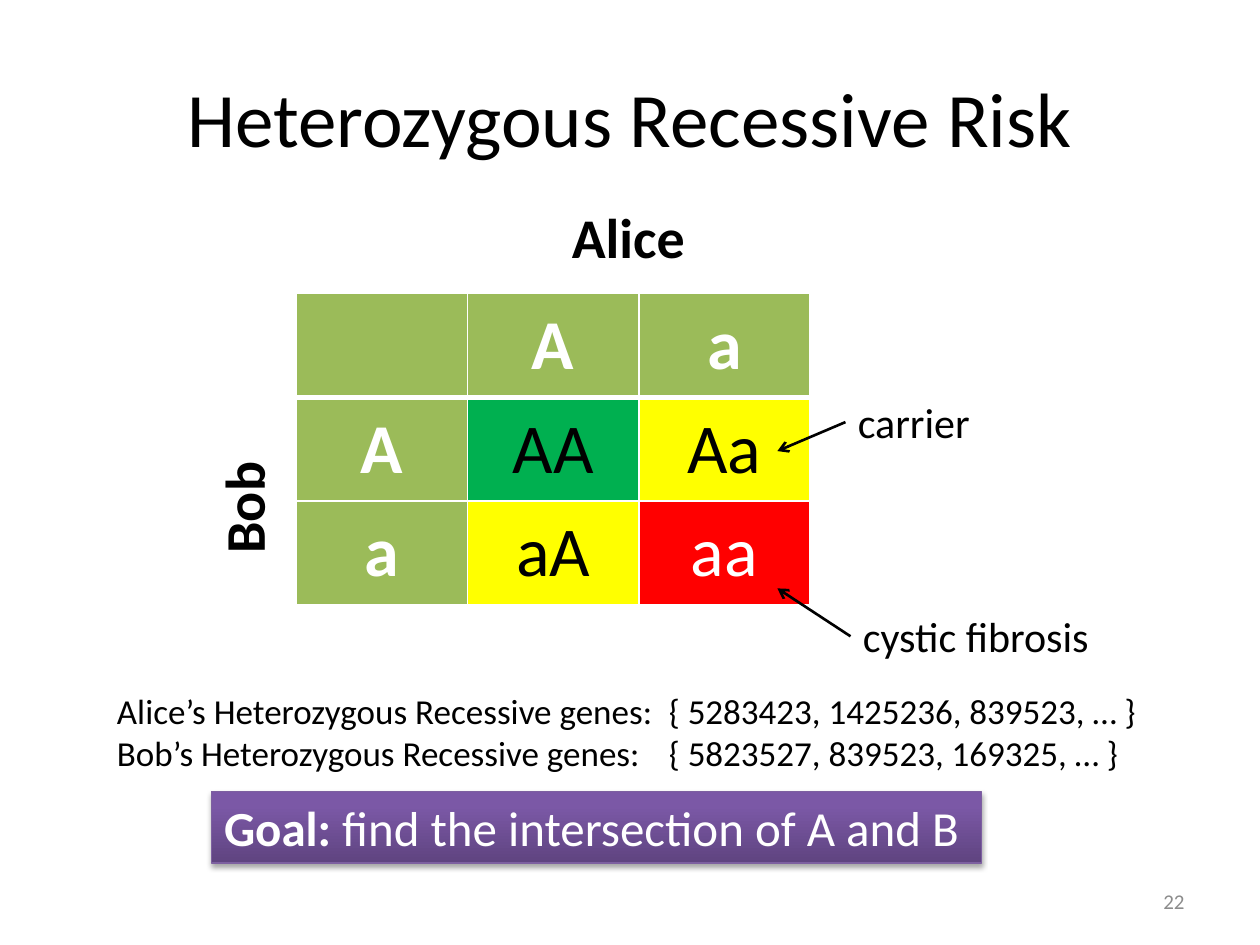
from lxml import etree
from pptx import Presentation
from pptx.dml.color import RGBColor
from pptx.enum.shapes import MSO_CONNECTOR, MSO_SHAPE
from pptx.enum.text import MSO_ANCHOR, MSO_AUTO_SIZE, PP_ALIGN
from pptx.oxml import parse_xml
from pptx.oxml.ns import qn
from pptx.util import Inches, Pt

LEFT, CENTER, RIGHT = PP_ALIGN.LEFT, PP_ALIGN.CENTER, PP_ALIGN.RIGHT
MIDDLE, TOP = MSO_ANCHOR.MIDDLE, MSO_ANCHOR.TOP
GROW = MSO_AUTO_SIZE.SHAPE_TO_FIT_TEXT
STRAIGHT, RECTANGLE = MSO_CONNECTOR.STRAIGHT, MSO_SHAPE.RECTANGLE
DRAWING_NS = 'xmlns:a="http://schemas.openxmlformats.org/drawingml/2006/main"'

COLORS = {
    "black": "000000", "white": "FFFFFF", "gray": "8C8C8C",
    "header": "9BBB59", "healthy": "00B050", "carrier": "FFFF00",
    "affected": "FF0000", "goal_line": "7D60A0",
    "goal_dark": "5F4480", "goal_mid": "7B58A6", "goal_light": "7C57A8",
}
SQUARE = [
    [("", "header"), ("A", "header"), ("a", "header")],
    [("A", "header"), ("AA", "healthy"), ("Aa", "carrier")],
    [("a", "header"), ("aA", "carrier"), ("aa", "affected")],
]
GENES = [
    ("Alice’s", "5283423, 1425236, 839523"),
    ("Bob’s", "5823527, 839523, 169325"),
]


def rgb(name):
    return RGBColor.from_string(COLORS[name])


def add_span(para, text, size, color="black", bold=False):
    span = para.add_run()
    span.text = text
    formats = {"name": "Calibri", "size": Pt(size), "bold": bold}
    for name, value in formats.items():
        setattr(span.font, name, value)
    span.font.color.rgb = rgb(color)


def add_label(page, box, text, size, color="black", bold=False,
              align=LEFT, anchor=TOP):
    label = page.shapes.add_textbox(*map(Inches, box))
    frame = label.text_frame
    formats = {"word_wrap": False, "auto_size": GROW, "vertical_anchor": anchor}
    for name, value in formats.items():
        setattr(frame, name, value)
    para = frame.paragraphs[0]
    para.alignment = align
    if text:
        add_span(para, text, size, color, bold)
    return label


def add_title(page, box, text):
    title = page.shapes.title
    for name, value in zip(("left", "top", "width", "height"), box):
        setattr(title, name, Inches(value))
    title.text_frame.vertical_anchor = MIDDLE
    para = title.text_frame.paragraphs[0]
    para.alignment = CENTER
    add_span(para, text, 44)


def set_borders(cell, widths):
    properties = cell._tc.get_or_add_tcPr()
    for side, width in widths.items():
        properties.append(parse_xml(
            f'<a:ln{side} {DRAWING_NS} w="{Pt(width)}"><a:solidFill>'
            f'<a:srgbClr val="{COLORS["white"]}"/></a:solidFill></a:ln{side}>'))


def add_square(page, box):
    """Punnett square with the parents' names beside it."""
    left, top, width, height = box
    table = page.shapes.add_table(3, 3, *map(Inches, box)).table
    for column in table.columns:
        column.width = Inches(width / 3)
    for row in table.rows:
        row.height = Inches(height / 3)
    for row, entries in enumerate(SQUARE):
        for column, (text, fill) in enumerate(entries):
            cell = table.cell(row, column)
            set_borders(cell, {"L": 1, "R": 1, "T": 3 if row == 1 else 1,
                               "B": 3 if row == 0 else 1})
            cell.fill.solid()
            cell.fill.fore_color.rgb = rgb(fill)
            cell.vertical_anchor = MIDDLE
            para = cell.text_frame.paragraphs[0]
            para.alignment = CENTER
            color = "white" if fill in ("header", "affected") else "black"
            if text:
                add_span(para, text, 40, color, fill == "header")
    add_label(page, (left + 2.09, top - 0.77, 1.11, 0.64), "Alice", 32, bold=True)
    bob = add_label(page, (left - 0.89, top + 1.37, 0.94, 0.64), "Bob", 32, bold=True)
    bob.rotation = 270


def add_callout(page, box, text, target):
    """Label with an arrow from its left edge to the target point."""
    left, top, _, height = box
    add_label(page, box, text, 24)
    ends = (left, top + height / 2, *target)
    arrow = page.shapes.add_connector(STRAIGHT, *map(Inches, ends))
    arrow.line.color.rgb = rgb("black")
    arrow.line.width = Pt(1.5)
    etree.SubElement(arrow.line._get_or_add_ln(), qn("a:tailEnd"), type="arrow")
    etree.SubElement(arrow._element.spPr, qn("a:effectLst"))


def add_genes(page, box):
    """Gene lists, with the sets lined up at a tab stop."""
    frame = add_label(page, box, "", 20).text_frame
    for index, (owner, genes) in enumerate(GENES):
        para = frame.add_paragraph() if index else frame.paragraphs[0]
        tabs = etree.SubElement(para._p.get_or_add_pPr(), qn("a:tabLst"))
        etree.SubElement(tabs, qn("a:tab"), pos=str(Inches(4.38)), algn="l")
        add_span(para, f"{owner} Heterozygous Recessive genes:\t{{ {genes}, … }}", 20)


def add_goal(page, box):
    """Purple gradient banner with a soft shadow."""
    banner = page.shapes.add_shape(RECTANGLE, *map(Inches, box))
    banner.shadow.inherit = False
    banner.line.color.rgb = rgb("goal_line")
    banner.line.width = Pt(0.75)
    stops = "".join(
        f'<a:gs pos="{place * 1000}"><a:srgbClr val="{COLORS[name]}"/></a:gs>'
        for place, name in ((0, "goal_dark"), (80, "goal_mid"), (100, "goal_light")))
    properties = banner._element.spPr
    properties.find(qn("a:prstGeom")).addnext(parse_xml(
        f'<a:gradFill {DRAWING_NS} rotWithShape="1"><a:gsLst>{stops}</a:gsLst>'
        '<a:lin ang="16200000" scaled="0"/></a:gradFill>'))
    properties.find(qn("a:effectLst")).append(parse_xml(
        f'<a:outerShdw {DRAWING_NS} blurRad="{Pt(3.1)}" dist="{Pt(1.8)}" '
        f'dir="5400000" rotWithShape="0"><a:srgbClr val="{COLORS["black"]}">'
        '<a:alpha val="35000"/></a:srgbClr></a:outerShdw>'))
    frame = banner.text_frame
    formats = {"word_wrap": False, "auto_size": GROW, "vertical_anchor": TOP}
    for name, value in formats.items():
        setattr(frame, name, value)
    para = frame.paragraphs[0]
    para.alignment = LEFT
    add_span(para, "Goal:", 28, "white", True)
    add_span(para, " find the intersection of A and B", 28, "white")


def main():
    deck = Presentation()
    deck.slide_width, deck.slide_height = Inches(10), Inches(7.5)
    page = deck.slides.add_slide(deck.slide_layouts[5])
    add_title(page, (0.5, 0.3, 9, 1.25), "Heterozygous Recessive Risk")
    # Slide number
    add_label(page, (7.17, 6.95, 2.33, 0.4), "22", 12, "gray",
              align=RIGHT, anchor=MIDDLE).text_frame.word_wrap = True
    # Inheritance square and its outcomes
    add_square(page, (2.35, 2.33, 4.08, 2.47))
    add_callout(page, (6.75, 4.8, 2.01, 0.5), "cystic fibrosis", (6.17, 4.67))
    add_callout(page, (6.71, 3.1, 1.1, 0.5), "carrier", (6.17, 3.58))
    # Gene sets and the goal
    add_goal(page, (1.68, 6.28, 6.11, 0.57))
    add_genes(page, (0.83, 5.42, 8.48, 0.77))
    deck.save("out.pptx")


if __name__ == "__main__":
    main()
